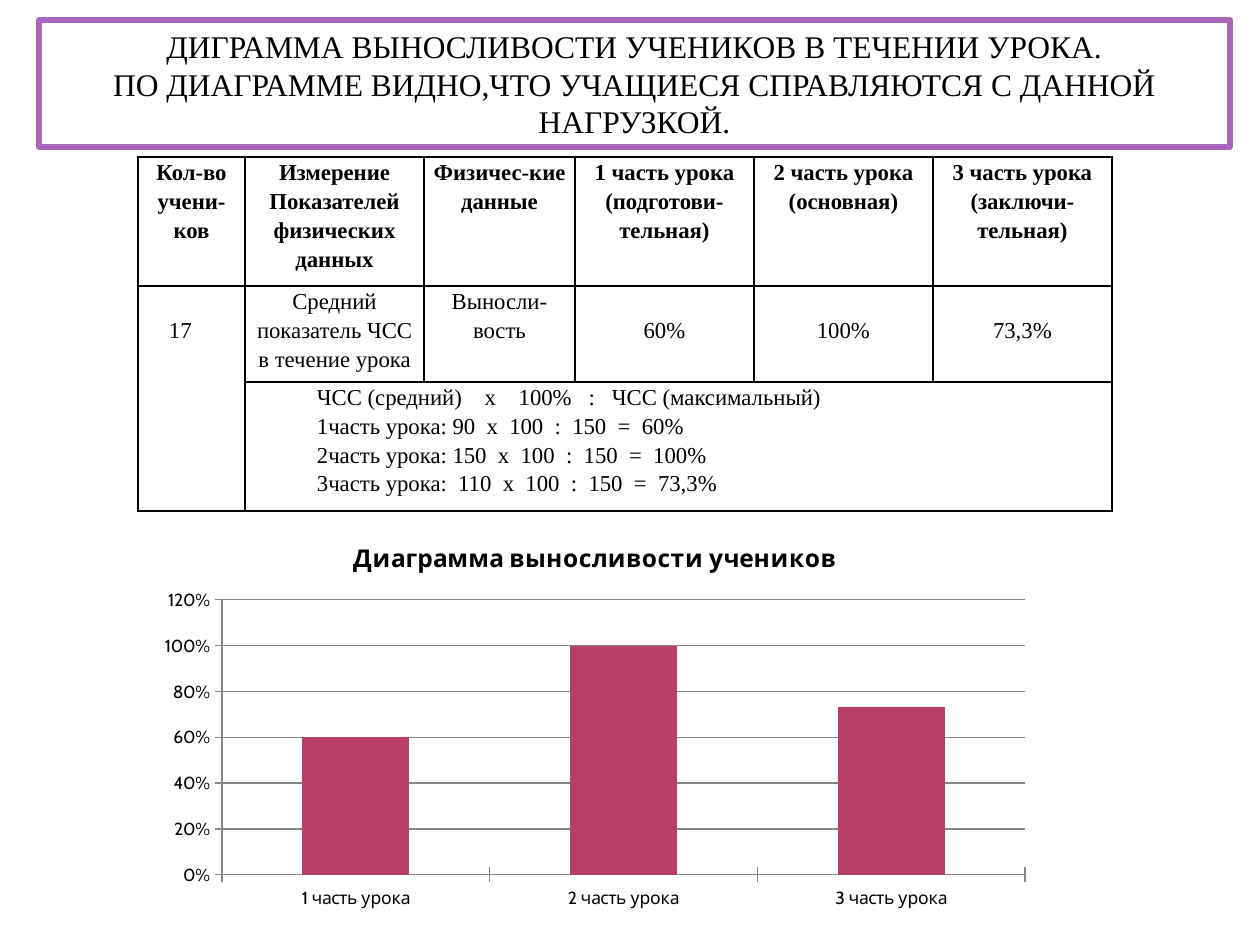
from lxml.etree import SubElement
from pptx import Presentation
from pptx.chart.data import CategoryChartData
from pptx.dml.color import RGBColor
from pptx.enum.chart import XL_CHART_TYPE, XL_TICK_MARK
from pptx.enum.shapes import MSO_SHAPE
from pptx.enum.text import MSO_ANCHOR, PP_ALIGN
from pptx.oxml.ns import qn
from pptx.util import Pt

PX = 914400 / 126
BLACK = RGBColor(0x00, 0x00, 0x00)
WHITE = RGBColor(0xFF, 0xFF, 0xFF)
VIOLET = RGBColor(0xAC, 0x66, 0xBB)
CRIMSON = RGBColor(0xB8, 0x3D, 0x68)
GRAY = RGBColor(0x87, 0x87, 0x87)
SERIF = "Times New Roman"
SANS = "Cabin"

COLUMNS = [107, 179, 151, 179, 179, 179]
ROWS = [129, 96, 129]
HEADINGS = [
    ["Кол-во учени-ков"],
    ["Измерение", "Показателей физических данных"],
    ["Физичес-кие данные"],
    ["1 часть урока", "(подготови-тельная)"],
    ["2 часть урока", "(основная)"],
    ["3 часть урока", "(заключи-тельная)"],
]
READINGS = ["Средний показатель ЧСС в течение урока", "Выносли-вость",
            "60%", "100%", "73,3%"]
FORMULAS = [
    "ЧСС (средний)    х    100%   :   ЧСС (максимальный)",
    "1часть урока: 90  х  100  :  150  =  60%",
    "2часть урока: 150  х  100  :  150  =  100%",
    "3часть урока:  110  х  100  :  150  =  73,3%",
]
TITLE_LINES = [
    "ДИГРАММА ВЫНОСЛИВОСТИ УЧЕНИКОВ В ТЕЧЕНИИ УРОКА.",
    "ПО ДИАГРАММЕ ВИДНО,ЧТО УЧАЩИЕСЯ СПРАВЛЯЮТСЯ С ДАННОЙ",
    "НАГРУЗКОЙ.",
]


def px(length):
    return round(length * PX)


def scaled(box):
    return [px(length) for length in box]


def write_lines(frame, lines, size, align, bold=False, spacing=1.0):
    frame.word_wrap = True
    for index, line in enumerate(lines):
        para = frame.paragraphs[0] if index == 0 else frame.add_paragraph()
        para.alignment = align
        para.line_spacing = spacing
        span = para.add_run()
        span.text = line
        span.font.name = SERIF
        span.font.size = Pt(size)
        span.font.bold = bold
        span.font.color.rgb = BLACK


def add_borders(cell):
    properties = cell._tc.get_or_add_tcPr()
    for position, side in enumerate(("a:lnL", "a:lnR", "a:lnT", "a:lnB")):
        line = properties.makeelement(qn(side), {"w": str(Pt(1))})
        fill = SubElement(line, qn("a:solidFill"))
        SubElement(fill, qn("a:srgbClr"), val=str(BLACK))
        properties.insert(position, line)


def fill_cell(cell, lines, align=PP_ALIGN.CENTER, bold=False, left=9, top=0):
    cell.margin_left, cell.margin_right = px(left), px(9)
    cell.margin_top, cell.margin_bottom = px(top), 0
    write_lines(cell.text_frame, lines, 13, align, bold, 1.15)


def add_title(page, box):
    panel = page.shapes.add_shape(MSO_SHAPE.RECTANGLE, *scaled(box))
    panel.shadow.inherit = False
    panel.fill.solid()
    panel.fill.fore_color.rgb = WHITE
    panel.line.color.rgb = VIOLET
    panel.line.width = Pt(3)
    panel.text_frame.vertical_anchor = MSO_ANCHOR.MIDDLE
    write_lines(panel.text_frame, TITLE_LINES, 18, PP_ALIGN.CENTER)


def add_measurements(page, box):
    table = page.shapes.add_table(len(ROWS), len(COLUMNS), *scaled(box)).table
    table.first_row = table.horz_banding = False
    for column, width in zip(table.columns, COLUMNS):
        column.width = px(width)
    for row, height in zip(table.rows, ROWS):
        row.height = px(height)
    for cell in table.iter_cells():
        cell.fill.background()
        add_borders(cell)

    for column, lines in enumerate(HEADINGS):
        fill_cell(table.cell(0, column), lines, bold=True)
    for column, reading in enumerate(READINGS, start=1):
        fill_cell(table.cell(1, column), [reading], top=29 if column > 2 else 0)
    table.cell(1, 0).merge(table.cell(2, 0))
    fill_cell(table.cell(1, 0), ["17"], PP_ALIGN.LEFT, left=31, top=29)
    table.cell(2, 1).merge(table.cell(2, 5))
    fill_cell(table.cell(2, 1), FORMULAS, PP_ALIGN.LEFT, left=72)


def add_endurance_chart(page, box):
    data = CategoryChartData(number_format="0%")
    data.categories = ["1 часть урока", "2 часть урока", "3 часть урока"]
    data.add_series("Series 1", [0.6, 1, 0.73])
    chart = page.shapes.add_chart(
        XL_CHART_TYPE.COLUMN_CLUSTERED, *scaled(box), data).chart
    chart.font.name = SANS
    chart.font.size = Pt(10)
    chart.font.color.rgb = BLACK
    chart.has_legend = False

    chart.has_title = True
    span = chart.chart_title.text_frame.paragraphs[0].add_run()
    span.text = "Диаграмма выносливости учеников"
    span.font.name = SANS
    span.font.size = Pt(14)
    span.font.bold = True
    span.font.color.rgb = BLACK
    chart.chart_title.include_in_layout = False

    plot = chart.plots[0]
    plot.vary_by_categories = False
    plot.gap_width = 150
    bars = plot.series[0].format.fill
    bars.solid()
    bars.fore_color.rgb = CRIMSON

    for axis in (chart.category_axis, chart.value_axis):
        axis.major_tick_mark = XL_TICK_MARK.CROSS
        axis.format.line.color.rgb = GRAY
    scale = chart.value_axis
    scale.minimum_scale, scale.maximum_scale, scale.major_unit = 0, 1.2, 0.2
    scale.has_major_gridlines = True
    scale.major_gridlines.format.line.color.rgb = GRAY
    scale.tick_labels.number_format = "0%"
    scale.tick_labels.number_format_is_linked = False


def main():
    deck = Presentation()
    deck.slide_width, deck.slide_height = px(1260), px(945)
    page = deck.slides.add_slide(deck.slide_layouts[6])
    add_measurements(page, (138, 157, sum(COLUMNS), sum(ROWS)))
    add_endurance_chart(page, (147, 522, 896, 394))
    add_title(page, (39, 20, 1191, 127))
    deck.save("out.pptx")


if __name__ == "__main__":
    main()
